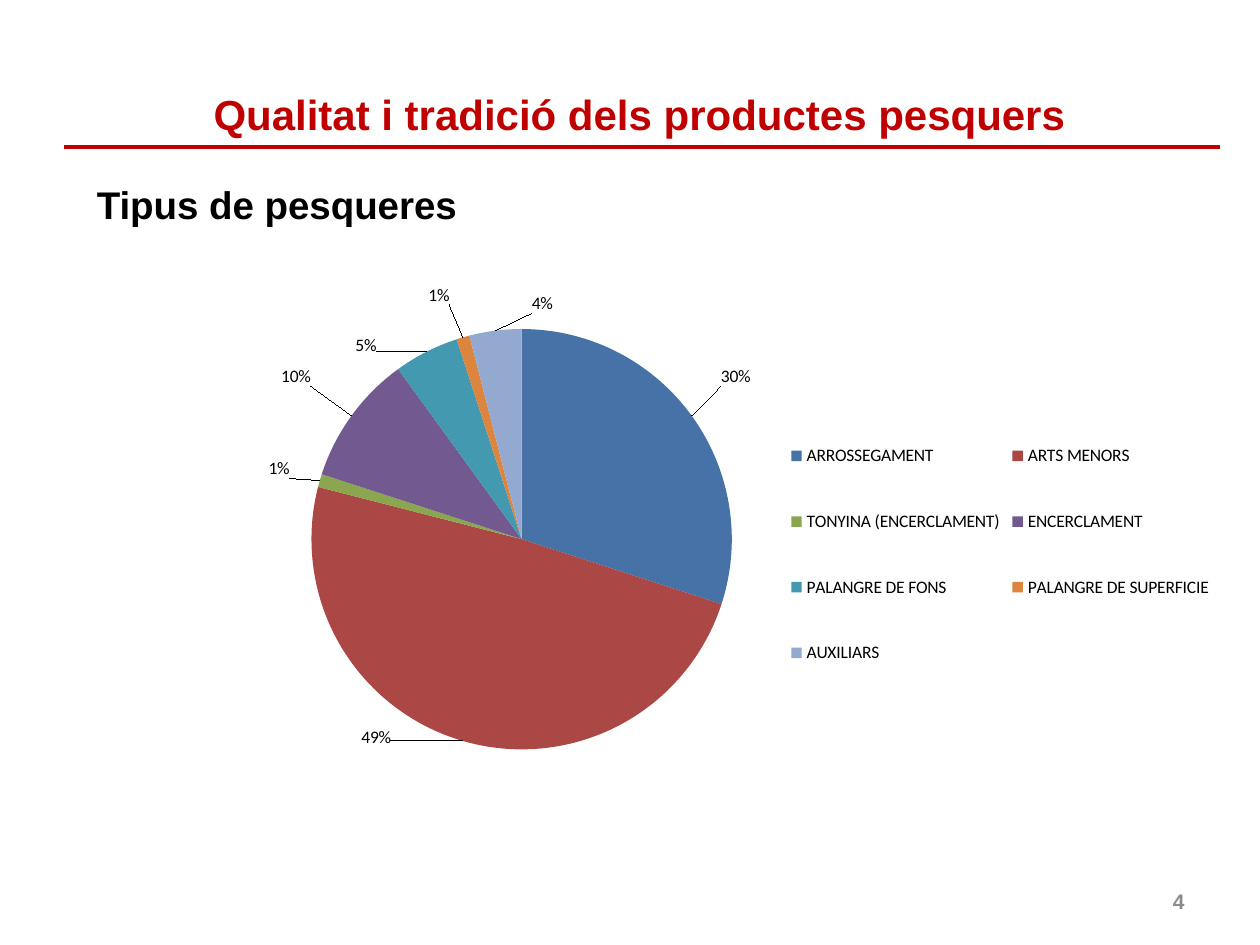
from lxml import etree
from pptx import Presentation
from pptx.chart.data import CategoryChartData
from pptx.dml.color import RGBColor
from pptx.enum.chart import XL_CHART_TYPE, XL_LABEL_POSITION, XL_LEGEND_POSITION
from pptx.enum.shapes import MSO_CONNECTOR
from pptx.enum.text import MSO_ANCHOR, PP_ALIGN
from pptx.oxml import parse_xml
from pptx.oxml.ns import nsdecls, qn
from pptx.util import Inches, Pt

LEFT, CENTER, RIGHT = PP_ALIGN.LEFT, PP_ALIGN.CENTER, PP_ALIGN.RIGHT
TOP, MIDDLE = MSO_ANCHOR.TOP, MSO_ANCHOR.MIDDLE
RED, BLACK, GRAY = "C00000", "000000", "8C8C8C"

# Category, percentage, colour, label shift as shares of the chart's size
FISHERIES = [
    ("ARROSSEGAMENT", 30, "4672A8", 0.02, -0.05),
    ("ARTS MENORS", 49, "AB4744", -0.06, -0.04),
    ("TONYINA (ENCERCLAMENT)", 1, "8AA64F", -0.02, 0),
    ("ENCERCLAMENT", 10, "725A90", -0.03, -0.05),
    ("PALANGRE DE FONS", 5, "4299B0", -0.04, 0.02),
    ("PALANGRE DE SUPERFICIE", 1, "DC853E", -0.01, -0.05),
    ("AUXILIARS", 4, "93A9D0", 0.05, -0.02),
]

# Texts: words, left, top, width, height, size, colour, alignment, anchor
TEXTS = [
    ("Qualitat i tradició dels productes pesquers",
     0.39, 0.63, 9.37, 0.55, 24, RED, CENTER, MIDDLE),
    ("Tipus de pesqueres", 0.67, 1.39, 9.09, 0.47, 22, BLACK, LEFT, TOP),
    ("4", 7.17, 6.95, 2.33, 0.4, 12, GRAY, RIGHT, MIDDLE),
]


def color(value):
    return RGBColor.from_string(value)


def manual_layout(x, y, width=None, height=None):
    layout = parse_xml(f"<c:layout {nsdecls('c')}><c:manualLayout/></c:layout>")
    if width is None:
        parts = [("x", x), ("y", y)]
    else:
        parts = [("xMode", "edge"), ("yMode", "edge"),
                 ("x", x), ("y", y), ("w", width), ("h", height)]
    for name, value in parts:
        etree.SubElement(layout[0], qn(f"c:{name}")).set("val", str(value))
    return layout


deck = Presentation()
deck.slide_width, deck.slide_height = Inches(10), Inches(7.5)
page = deck.slides.add_slide(deck.slide_layouts[6])

# Rule under the title
rule = page.shapes.add_connector(
    MSO_CONNECTOR.STRAIGHT, Inches(0.51), Inches(1.17), Inches(9.68), Inches(1.17))
rule.line.color.rgb = color(RED)
rule.line.width = Pt(2.25)
etree.SubElement(rule._element.spPr, qn("a:effectLst"))

# Title, subtitle and page number
for words, left, top, width, height, size, ink, align, anchor in TEXTS:
    box = page.shapes.add_textbox(
        Inches(left), Inches(top), Inches(width), Inches(height))
    box.text_frame.word_wrap = True
    box.text_frame.vertical_anchor = anchor
    para = box.text_frame.paragraphs[0]
    para.alignment = align
    span = para.add_run()
    span.text = words
    span.font.name = "Arial"
    span.font.size = Pt(size)
    span.font.bold = True
    span.font.color.rgb = color(ink)

# Pie of fishery types
data = CategoryChartData(number_format="0")
data.categories = [fishery[0] for fishery in FISHERIES]
data.add_series("Series 1", [fishery[1] for fishery in FISHERIES])
chart = page.shapes.add_chart(
    XL_CHART_TYPE.PIE, Inches(0.39), Inches(2.25), Inches(9.26), Inches(4.02), data).chart
chart.has_title = False
chart.font.name = "Calibri"
chart.font.size = Pt(10)
chart.font.color.rgb = color(BLACK)
plot = chart.plots[0]
plot.vary_by_categories = True
plot_area = chart._chartSpace.chart.plotArea
for old in plot_area.findall(qn("c:layout")):
    plot_area.remove(old)
plot_area.insert(0, manual_layout(0.22, 0.09, 0.37, 0.83))

# Legend at the right, in two columns
chart.has_legend = True
chart.legend.position = XL_LEGEND_POSITION.RIGHT
chart.legend.include_in_layout = False
legend = chart.legend._element
for old in legend.findall(qn("c:layout")):
    legend.remove(old)
legend.find(qn("c:legendPos")).addnext(manual_layout(0.63, 0.23, 0.37, 0.61))

# Percentage labels with leader lines
series = plot.series[0]
labels = series.data_labels
labels.show_percentage = True
labels.show_value = False
labels.number_format = "0%"
labels.number_format_is_linked = False
labels.position = XL_LABEL_POSITION.OUTSIDE_END
leader = labels._element.find(qn("c:showLeaderLines"))
if leader is None:
    leader = etree.SubElement(labels._element, qn("c:showLeaderLines"))
leader.set("val", "1")

# Slice colours and label shifts
flags = {"LegendKey": 0, "Val": 0, "CatName": 0, "SerName": 0, "Percent": 1, "BubbleSize": 0}
for index, (name, share, ink, shift_x, shift_y) in enumerate(FISHERIES):
    fill = series.points[index].format.fill
    fill.solid()
    fill.fore_color.rgb = color(ink)
    label = parse_xml(f'<c:dLbl {nsdecls("c")}><c:idx val="{index}"/></c:dLbl>')
    label.append(manual_layout(shift_x, shift_y))
    etree.SubElement(label, qn("c:dLblPos")).set("val", "outEnd")
    for flag, value in flags.items():
        etree.SubElement(label, qn(f"c:show{flag}")).set("val", str(value))
    labels._element.insert(index, label)

deck.save("out.pptx")
